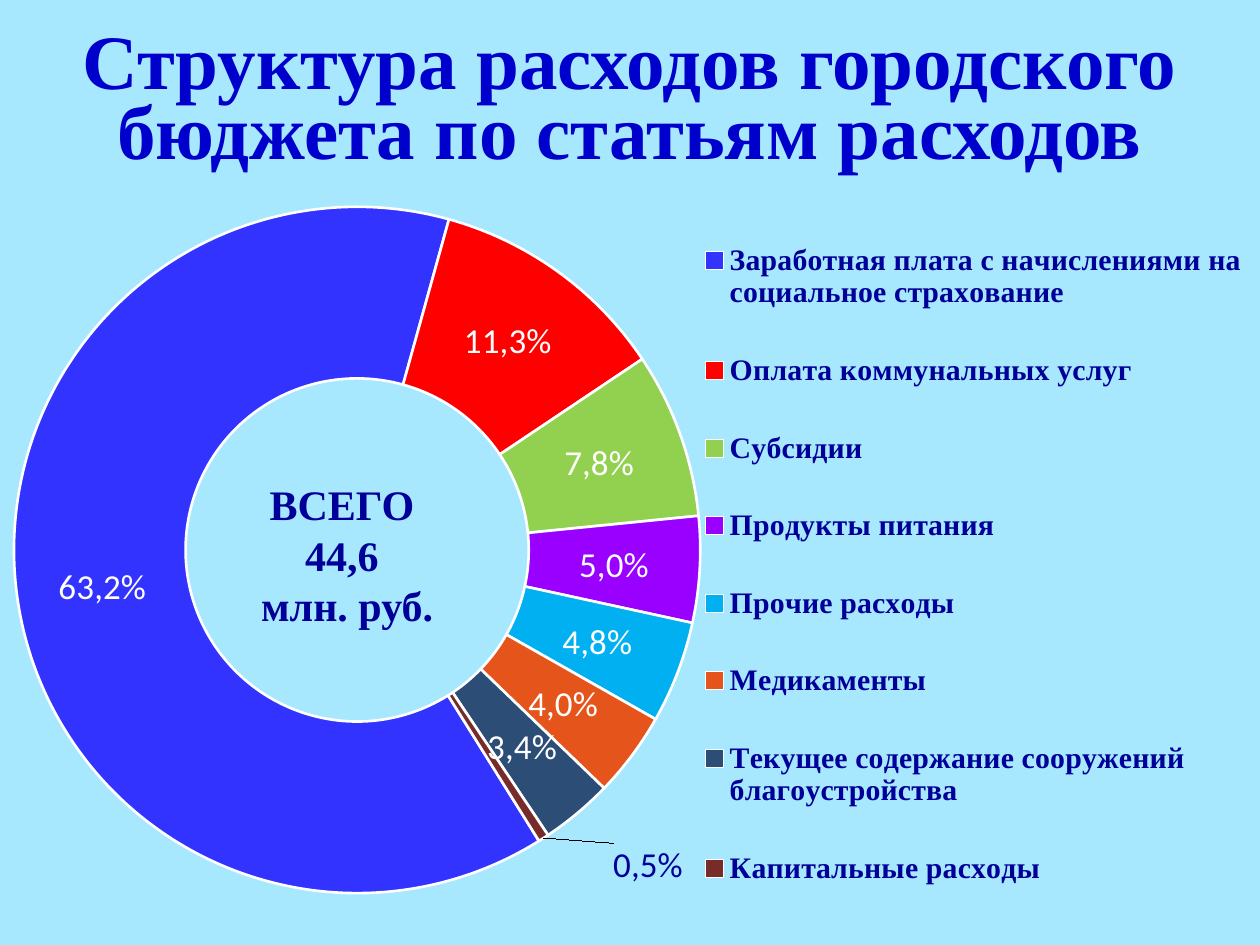
from dataclasses import dataclass

import lxml.etree
import pptx
import pptx.chart.data
import pptx.dml.color
import pptx.enum.chart
import pptx.enum.text
import pptx.oxml
import pptx.oxml.ns
import pptx.util

Cm = pptx.util.Cm
Pt = pptx.util.Pt
RGBColor = pptx.dml.color.RGBColor

SKY = RGBColor(0xA7, 0xE8, 0xFF)
TITLE_BLUE = RGBColor(0x00, 0x00, 0xCC)
NAVY = RGBColor(0x00, 0x00, 0x99)
WHITE = RGBColor(0xFF, 0xFF, 0xFF)
SERIF = "Times New Roman"
SANS = "Calibri"


@dataclass(frozen=True)
class Expense:
    name: str
    share: float
    color: RGBColor
    label_color: RGBColor = WHITE
    label_shift: tuple[float, float] | None = None

    @property
    def label(self) -> str:
        return f"{self.share:.1%}".replace(".", ",")


EXPENSES = [
    Expense("Заработная плата с начислениями на социальное страхование", 0.632,
            RGBColor(0x33, 0x33, 0xFF)),
    Expense("Оплата коммунальных услуг", 0.113, RGBColor(0xFF, 0x00, 0x00)),
    Expense("Субсидии", 0.078, RGBColor(0x92, 0xD0, 0x50)),
    Expense("Продукты питания", 0.05, RGBColor(0x99, 0x00, 0xFF)),
    Expense("Прочие расходы ", 0.048, RGBColor(0x00, 0xB0, 0xF0)),
    Expense("Медикаменты", 0.04, RGBColor(0xE5, 0x55, 0x1B)),
    Expense("Текущее содержание сооружений благоустройства", 0.034,
            RGBColor(0x2C, 0x4D, 0x75)),
    Expense("Капитальные расходы", 0.005, RGBColor(0x77, 0x2C, 0x2A), NAVY, (0.12, 0.13)),
]


def style_font(font, color: RGBColor, **values) -> None:
    for name, value in values.items():
        setattr(font, name, value)
    font.color.rgb = color


def set_layout(parent, index: int, **values) -> None:
    """Give a chart part a manual layout, as fractions of the chart."""
    for old in parent.findall(pptx.oxml.ns.qn("c:layout")):
        parent.remove(old)
    settings = "".join(f'<c:{name} val="{value}"/>' for name, value in values.items())
    parent.insert(index, pptx.oxml.parse_xml(
        f'<c:layout {pptx.oxml.ns.nsdecls("c")}>'
        f"<c:manualLayout>{settings}</c:manualLayout></c:layout>"))


def add_title(page, text: str) -> None:
    title = page.shapes.title
    place = {"left": Cm(1.27), "top": Cm(0.53), "width": Cm(22.86), "height": Cm(3.18)}
    for name, value in place.items():
        setattr(title, name, value)
    title.text_frame.text = text
    title.text_frame.vertical_anchor = pptx.enum.text.MSO_ANCHOR.MIDDLE
    para = title.text_frame.paragraphs[0]
    para.alignment = pptx.enum.text.PP_ALIGN.CENTER
    para.line_spacing = Pt(40)
    style_font(para.runs[0].font, TITLE_BLUE, name=SERIF, size=Pt(44), bold=True)


def format_slice(series, index: int, expense: Expense) -> None:
    point = series.points[index]
    point.format.fill.solid()
    point.format.fill.fore_color.rgb = expense.color
    point.format.line.color.rgb = WHITE
    point.format.line.width = Pt(1.5)
    para = point.data_label.text_frame.paragraphs[0]
    span = para.add_run()
    span.text = expense.label
    style_font(span.font, expense.label_color, name=SANS, size=Pt(20), bold=False)
    if expense.label_shift:
        label = series._element.xpath(f"c:dLbls/c:dLbl[c:idx/@val='{index}']")[0]
        across, down = expense.label_shift
        set_layout(label, 1, x=across, y=down)


def add_doughnut(page, expenses: list[Expense]) -> None:
    data = pptx.chart.data.CategoryChartData(number_format="0.0%")
    data.categories = [expense.name for expense in expenses]
    data.add_series("Series 1", [expense.share for expense in expenses])
    chart = page.shapes.add_chart(
        pptx.enum.chart.XL_CHART_TYPE.DOUGHNUT,
        Cm(0), Cm(3.71), Cm(25.4), Cm(15.34), data).chart
    chart.has_title = False
    style_font(chart.font, RGBColor(0, 0, 0), name=SANS, size=Pt(10))

    chart.has_legend = True
    legend = chart.legend
    legend.position = pptx.enum.chart.XL_LEGEND_POSITION.RIGHT
    legend.include_in_layout = False
    style_font(legend.font, NAVY, name=SERIF, size=Pt(17), bold=True)
    set_layout(legend._element, 1, xMode="edge", yMode="edge", x=0.56, y=0.02, w=0.43, h=0.96)

    plot = chart.plots[0]
    plot.vary_by_categories = True
    ring = plot._element
    ring.find(pptx.oxml.ns.qn("c:firstSliceAng")).set("val", "148")
    ring.find(pptx.oxml.ns.qn("c:holeSize")).set("val", "37")
    set_layout(ring.getparent(), 0, layoutTarget="inner", xMode="edge", yMode="edge",
               x=0.011, y=0.03, w=0.545, h=0.902)

    series = plot.series[0]
    labels = series.data_labels
    labels.show_value = True
    labels.number_format = "0.0%"
    labels.number_format_is_linked = False
    style_font(labels.font, WHITE, name=SANS, size=Pt(20), bold=False)
    for index, expense in enumerate(expenses):
        format_slice(series, index, expense)


def add_total(page, lines: list[str]) -> None:
    box = page.shapes.add_textbox(Cm(4.7), Cm(9.53), Cm(4.6), Cm(3.33))
    frame = box.text_frame
    frame.word_wrap = True
    frame.text = "\n".join(lines)
    for para in frame.paragraphs:
        para.alignment = pptx.enum.text.PP_ALIGN.CENTER
        style_font(para.runs[0].font, NAVY, name=SERIF, size=Pt(24), bold=True)


def main() -> None:
    deck = pptx.Presentation()
    deck.slide_width, deck.slide_height = Cm(25.4), Cm(19.05)
    page = deck.slides.add_slide(deck.slide_layouts.get_by_name("Title Only"))
    page.background.fill.solid()
    page.background.fill.fore_color.rgb = SKY
    add_title(page, "Структура расходов городского бюджета по статьям расходов")
    add_doughnut(page, EXPENSES)
    add_total(page, ["ВСЕГО ", "44,6 ", "млн. руб."])
    deck.save("out.pptx")


if __name__ == "__main__":
    main()
